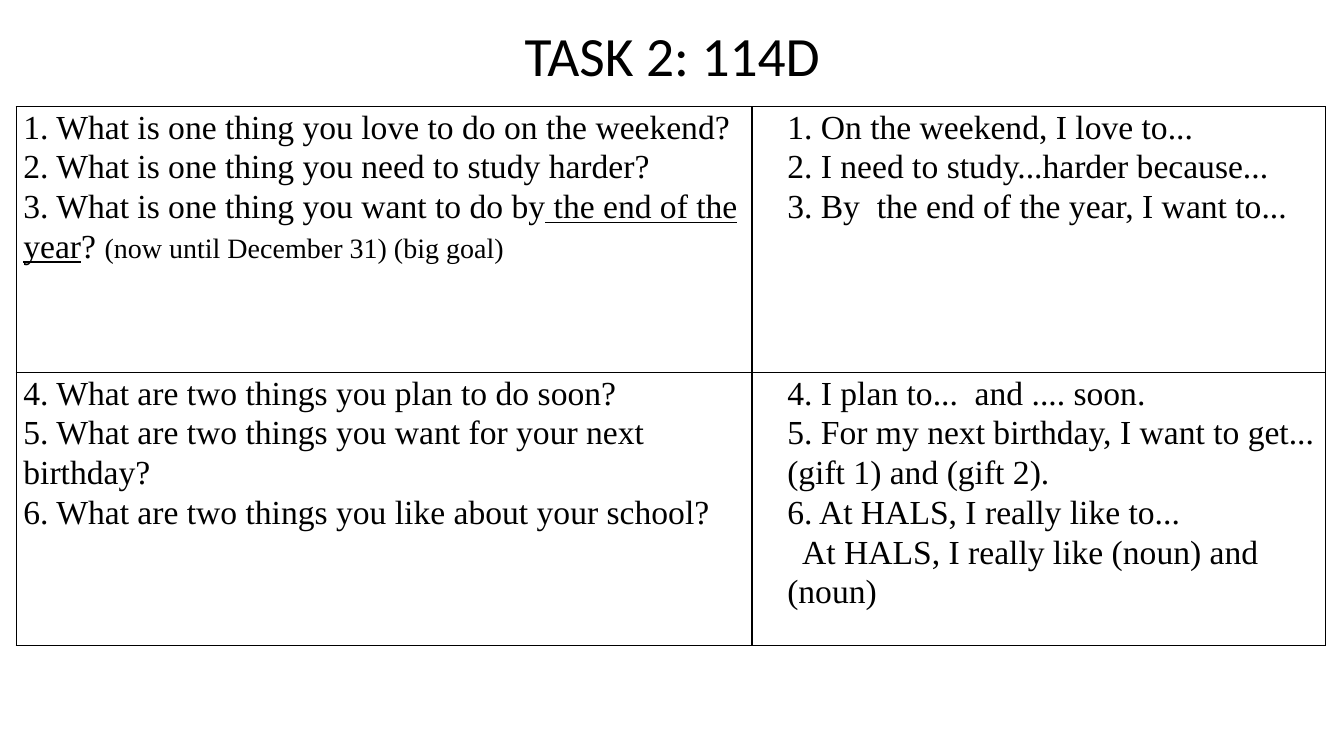
import lxml.etree
import pptx
import pptx.dml.color
import pptx.enum.text
import pptx.oxml.ns
import pptx.util
from pptx.util import Cm

COLOURS = {"ink": "000000", "paper": "FFFFFF"}
TITLE_FORMAT = {"name": "Calibri", "size": pptx.util.Pt(39.6), "bold": False}
BODY_FORMAT = {"name": "Times New Roman", "size": pptx.util.Pt(24), "bold": False}
UNDERLINED = {"underline": True}
SMALL = {"size": pptx.util.Pt(20)}
MARGINS = {"margin_left": Cm(0.18), "margin_right": Cm(0.18),
           "margin_top": 0, "margin_bottom": 0}
NO_MARGINS = dict.fromkeys(MARGINS, 0)
ANSWER_INDENT = Cm(0.71)
COLUMN_WIDTHS = [Cm(18.54), Cm(14.45)]
ROW_HEIGHTS = [Cm(6.7), Cm(6.88)]

TASKS = [
    (
        [
            ["1. What is one thing you love to do on the weekend?"],
            ["2. What is one thing you need to study harder?"],
            ["3. What is one thing you want to do by",
             (" the end of the year", UNDERLINED),
             "? ",
             ("(now until December 31) (big goal)", SMALL)],
        ],
        [
            ["1. On the weekend, I love to..."],
            ["2. I need to study...harder because..."],
            ["3. By  the end of the year, I want to..."],
        ],
    ),
    (
        [
            ["4. What are two things you plan to do soon?"],
            ["5. What are two things you want for your next birthday?"],
            ["6. What are two things you like about your school?"],
        ],
        [
            ["4. I plan to...  and .... soon."],
            ["5. For my next birthday, I want to get...(gift 1) and (gift 2)."],
            ["6. At HALS, I really like to..."],
            ["  At HALS, I really like (noun) and (noun)"],
        ],
    ),
]


def apply(target, values):
    """Set every attribute in values on the target."""
    for name, value in values.items():
        setattr(target, name, value)


def add_span(para, text, values):
    """Append a formatted run of text to a paragraph."""
    span = para.add_run()
    span.text = text
    apply(span.font, values)
    span.font.color.rgb = pptx.dml.color.RGBColor.from_string(COLOURS["ink"])


def draw_borders(cell):
    """Draw a thin line on all four sides of a cell."""
    properties = cell._tc.get_or_add_tcPr()
    for position, side in enumerate(("lnL", "lnR", "lnT", "lnB")):
        line = lxml.etree.Element(pptx.oxml.ns.qn(f"a:{side}"), w=str(pptx.util.Pt(1)))
        fill = lxml.etree.SubElement(line, pptx.oxml.ns.qn("a:solidFill"))
        lxml.etree.SubElement(fill, pptx.oxml.ns.qn("a:srgbClr"), val=COLOURS["ink"])
        properties.insert(position, line)


def fill_cell(cell, lines, indent):
    """Write the lines of one cell and format it."""
    apply(cell, MARGINS)
    cell.fill.solid()
    cell.fill.fore_color.rgb = pptx.dml.color.RGBColor.from_string(COLOURS["paper"])
    draw_borders(cell)
    frame = cell.text_frame
    for number, parts in enumerate(lines):
        para = frame.add_paragraph() if number else frame.paragraphs[0]
        para.line_spacing = 1.07
        para._p.get_or_add_pPr().set("marL", str(indent))
        for part in parts:
            text, extra = (part, {}) if isinstance(part, str) else part
            add_span(para, text, BODY_FORMAT | extra)


def place_title(page, left, top, width, height):
    """Move the title placeholder into the box and write the heading."""
    title = page.shapes.title
    apply(title, {"left": left, "top": top, "width": width, "height": height})
    apply(title.text_frame, NO_MARGINS | {
        "word_wrap": True,
        "auto_size": pptx.enum.text.MSO_AUTO_SIZE.NONE,
        "vertical_anchor": pptx.enum.text.MSO_ANCHOR.MIDDLE})
    para = title.text_frame.paragraphs[0]
    apply(para, {"alignment": pptx.enum.text.PP_ALIGN.CENTER, "line_spacing": 0.9})
    add_span(para, "TASK 2: 114D", TITLE_FORMAT)


def place_tasks(page, left, top):
    """Build the table of questions and answer starters from its top left corner."""
    table = page.shapes.add_table(
        len(TASKS), len(COLUMN_WIDTHS), left, top,
        sum(COLUMN_WIDTHS), sum(ROW_HEIGHTS)).table
    apply(table, {"first_row": False, "horz_banding": False})
    for column, width in zip(table.columns, COLUMN_WIDTHS):
        column.width = width
    for row, height, (questions, answers) in zip(table.rows, ROW_HEIGHTS, TASKS):
        row.height = height
        fill_cell(row.cells[0], questions, 0)
        fill_cell(row.cells[1], answers, ANSWER_INDENT)


def main():
    """Build the slide and save the deck."""
    deck = pptx.Presentation()
    apply(deck, {"slide_width": Cm(33.87), "slide_height": Cm(19.05)})
    page = deck.slides.add_slide(deck.slide_layouts[5])
    place_title(page, Cm(2.34), Cm(1.02), Cm(29.21), Cm(0.89))
    place_tasks(page, Cm(0.41), Cm(2.69))
    deck.save("out.pptx")


if __name__ == "__main__":
    main()
